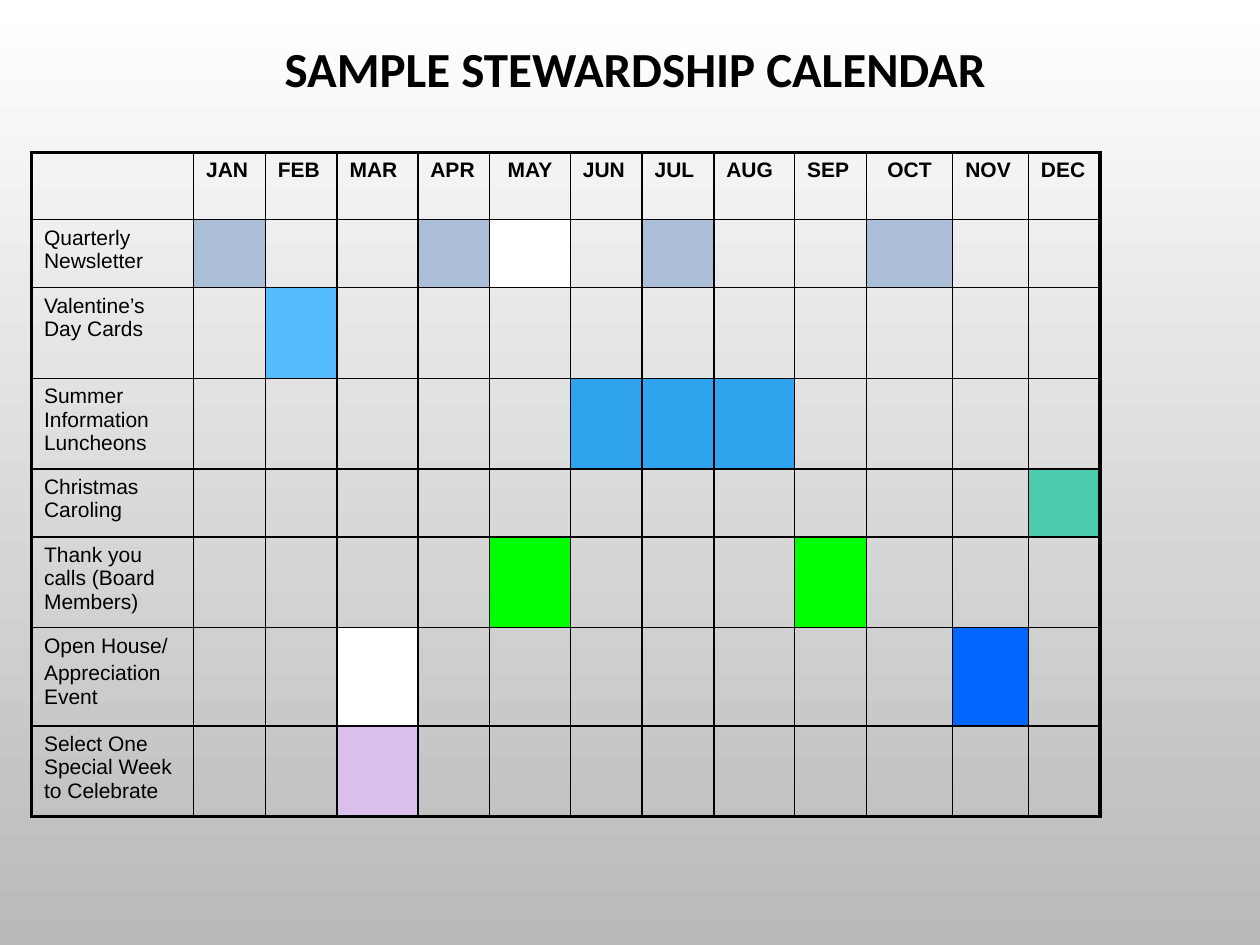
from lxml.etree import SubElement
from pptx import Presentation
from pptx.dml.color import RGBColor
from pptx.enum.text import MSO_ANCHOR, PP_ALIGN
from pptx.oxml.ns import qn
from pptx.util import Pt

BLACK = "000000"
MONTHS = ["JAN", "FEB", "MAR", "APR", "MAY", "JUN",
          "JUL", "AUG", "SEP", "OCT", "NOV", "DEC"]
CENTERED = ("MAY", "OCT")
COL_WIDTHS = [92.6, 41, 41, 46.2, 41, 46.2, 41, 41, 46.2, 41, 49.4, 43.2, 41]
HEADER_HEIGHT = 38.4
# Activity, row height, fill of each marked month
ACTIVITIES = [
    ("Quarterly Newsletter", 38.9,
     {"JAN": "AABED7", "APR": "AABED7", "MAY": "FFFFFF", "JUL": "AABED7", "OCT": "AABED7"}),
    ("Valentine’s Day Cards", 51.8, {"FEB": "56BCFE"}),
    ("Summer Information Luncheons", 51.8,
     {"JUN": "2FA3EE", "JUL": "2FA3EE", "AUG": "2FA3EE"}),
    ("Christmas Caroling", 38.9, {"DEC": "4BCAAD"}),
    ("Thank you calls (Board Members)", 51.8, {"MAY": "00FF00", "SEP": "00FF00"}),
    ("Open House/\nAppreciation Event", 56.2, {"MAR": "FFFFFF", "NOV": "0066FF"}),
    ("Select One Special Week to Celebrate", 51.8, {"MAR": "DABEED"}),
]


def rgb(value):
    return RGBColor.from_string(value)


def set_font(font, name, size, bold):
    font.name = name
    font.size = Pt(size)
    font.bold = bold
    font.color.rgb = rgb(BLACK)


def set_borders(cell, widths):
    """Draw the left, right, top and bottom borders, in that order."""
    tcPr = cell._tc.get_or_add_tcPr()
    for side, width in zip("LRTB", widths):
        ln = SubElement(tcPr, qn(f"a:ln{side}"), w=str(Pt(width)))
        fill = SubElement(ln, qn("a:solidFill"))
        SubElement(fill, qn("a:srgbClr"), val=BLACK)


def set_fill(cell, color):
    if color:
        cell.fill.solid()
        cell.fill.fore_color.rgb = rgb(color)
    else:
        cell.fill.background()


def write_cell(cell, text, bold=False, align=PP_ALIGN.LEFT):
    cell.text_frame.text = text
    for i, p in enumerate(cell.text_frame.paragraphs):
        p.alignment = align
        if i:
            p.space_before = Pt(2.4)
        for r in p.runs:
            set_font(r.font, "Arial", 12, bold)


def paint_background(s):
    fill = s.background.fill
    fill.gradient()
    fill.gradient_angle = 270
    for stop, color in zip(fill.gradient_stops, ("FFFFFF", "B9B9B9")):
        stop.color.rgb = rgb(color)


def place_title(s, left, top, width, height):
    sp = s.shapes.title
    sp.left, sp.top, sp.width, sp.height = Pt(left), Pt(top), Pt(width), Pt(height)
    tf = sp.text_frame
    tf.text = "SAMPLE STEWARDSHIP CALENDAR"
    tf.vertical_anchor = MSO_ANCHOR.MIDDLE
    p = tf.paragraphs[0]
    p.alignment = PP_ALIGN.CENTER
    p.line_spacing = 0.9
    set_font(p.runs[0].font, "Calibri", 28, True)


def add_calendar(s, left, top):
    heights = [HEADER_HEIGHT] + [height for _, height, _ in ACTIVITIES]
    n_rows, n_cols = len(heights), len(COL_WIDTHS)
    table = s.shapes.add_table(n_rows, n_cols, Pt(left), Pt(top),
                               Pt(sum(COL_WIDTHS)), Pt(sum(heights))).table
    table.first_row = table.horz_banding = False
    for column, width in zip(table.columns, COL_WIDTHS):
        column.width = Pt(width)
    for row, height in zip(table.rows, heights):
        row.height = Pt(height)

    for i in range(n_rows):
        for j in range(n_cols):
            outer = (j == 0, j == n_cols - 1, i == 0, i == n_rows - 1)
            cell = table.cell(i, j)
            set_borders(cell, [2.25 if edge else 1 for edge in outer])
            marked = ACTIVITIES[i - 1][2] if i and j else {}
            set_fill(cell, marked.get(MONTHS[j - 1]))

    for j, month in enumerate(MONTHS, 1):
        align = PP_ALIGN.CENTER if month in CENTERED else PP_ALIGN.LEFT
        write_cell(table.cell(0, j), month, True, align)
    for i, (activity, _, _) in enumerate(ACTIVITIES, 1):
        write_cell(table.cell(i, 0), activity)


def main():
    prs = Presentation()
    prs.slide_width, prs.slide_height = Pt(720), Pt(540)
    s = prs.slides.add_slide(prs.slide_layouts[5])
    paint_background(s)
    place_title(s, 144, 12.2, 437.8, 56.9)
    add_calendar(s, 18, 87.1)
    prs.save("out.pptx")


if __name__ == "__main__":
    main()
